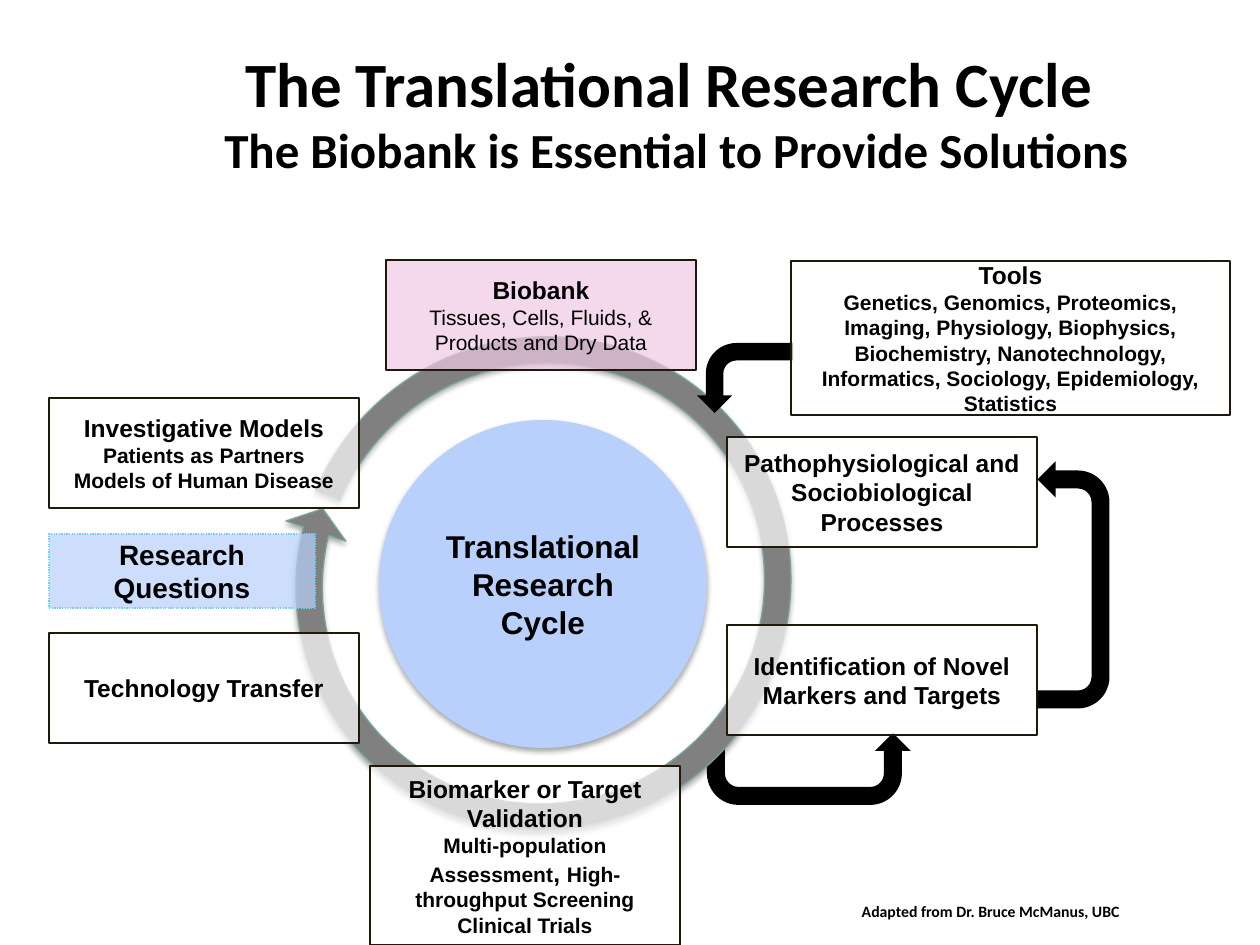
"""Build the translational research cycle slide."""
import pptx
import pptx.util
import pptx.dml.color
import pptx.enum.dml
import pptx.enum.shapes
import pptx.enum.text
from dataclasses import dataclass
from lxml import etree

PX = 914400 / 126
SHAPE = pptx.enum.shapes.MSO_SHAPE
ANCHOR = pptx.enum.text.MSO_ANCHOR


@dataclass(frozen=True)
class Theme:
    heading_font: str = "Calibri"
    label_font: str = "Arial"
    ink: str = "000000"
    paper: str = "FFFFFF"
    pink: str = "F0CAE5"
    blue: str = "B8D0FB"
    ring: str = "808080"
    ring_edge: str = "77A49A"
    box_edge: str = "20190B"
    question_edge: str = "6DCFF6"
    title: int = 36
    subtitle: int = 28
    hub: int = 18
    question: int = 16
    head: int = 14
    detail: int = 12
    credit: int = 9
    edge: float = 0.75
    box_alpha: int = 70


T = Theme()
STAGE_W, STAGE_H = 310, 110
LEFT_X, RIGHT_X = 49, 727

TITLE = [[("The Translational Research Cycle ", T.title, True)],
         [("The Biobank is Essential to Provide Solutions", T.subtitle, True)]]
CREDIT = [[("Adapted from Dr. Bruce McManus, UBC", T.credit, True)]]
HUB = [[("Translational Research Cycle", T.hub, True)]]
QUESTIONS = [[("Research Questions", T.question, True)]]

STAGES = [
    ((LEFT_X, 398, STAGE_W, STAGE_H), T.paper,
     [[("Investigative Models", T.head, True)],
      [("Patients as Partners", T.detail, True)],
      [("Models of Human Disease", T.detail, True)]]),
    ((386, 260, STAGE_W, STAGE_H), T.pink,
     [[("Biobank", T.head, True)],
      [("Tissues, Cells, Fluids, & Products and Dry Data", T.detail, False)]]),
    ((RIGHT_X, 437, STAGE_W, STAGE_H), T.paper,
     [[("Pathophysiological and Sociobiological Processes", T.head, True)]]),
    ((RIGHT_X, 625, STAGE_W, STAGE_H), T.paper,
     [[("Identification of Novel Markers and Targets", T.head, True)]]),
    ((370, 766, STAGE_W, 179), T.paper,
     [[("Biomarker or Target Validation", T.head, True)],
      [("Multi-population Assessment", T.detail, True), (", ", T.head, True),
       ("High-throughput Screening", T.detail, True)],
      [("Clinical Trials", T.detail, True)]]),
    ((LEFT_X, 633, STAGE_W, STAGE_H), T.paper,
     [[("Technology Transfer", T.head, True)]]),
]
TOOLS = ((791, 261, 439, 154), T.paper,
         [[("Tools", T.head, True)],
          [("Genetics, Genomics, Proteomics, Imaging, Physiology, Biophysics, "
            "Biochemistry, Nanotechnology, Informatics, Sociology, "
            "Epidemiology, Statistics", T.detail, True)]])

U_TURN = (0.25, 0.25, 0.25, 0.44, 1)
RING = (0.05, 3.44, 139.12, 144.59, 0.06)


def emu(frame):
    return [pptx.util.Emu(round(v * PX)) for v in frame]


def rgb(code):
    return pptx.dml.color.RGBColor.from_string(code)


def add_alpha(color, percent):
    etree.SubElement(color, pptx.oxml.ns.qn("a:alpha"), val=str(percent * 1000))


def write(frame, lines, font, anchor, margins=(13, 6)):
    frame.word_wrap = True
    frame.auto_size = pptx.enum.text.MSO_AUTO_SIZE.NONE
    frame.vertical_anchor = anchor
    side, edge = emu(margins)
    frame.margin_left = frame.margin_right = side
    frame.margin_top = frame.margin_bottom = edge
    paragraph = frame.paragraphs[0]
    paragraph.alignment = pptx.enum.text.PP_ALIGN.CENTER
    for index, line in enumerate(lines):
        if index:
            paragraph.add_line_break()
        for text, size, bold in line:
            run = paragraph.add_run()
            run.text = text
            run.font.name = font
            run.font.size = pptx.util.Pt(size)
            run.font.bold = bold
            run.font.color.rgb = rgb(T.ink)


def add_figure(slide, kind, frame, fill, edge=None, adjustments=(),
               rotation=0, flip=None):
    figure = slide.shapes.add_shape(kind, *emu(frame))
    figure.shadow.inherit = False
    figure.fill.solid()
    figure.fill.fore_color.rgb = rgb(fill)
    if edge:
        figure.line.color.rgb = rgb(edge)
        figure.line.width = pptx.util.Pt(T.edge)
    else:
        figure.line.fill.background()
    for index, value in enumerate(adjustments):
        figure.adjustments[index] = value
    figure.rotation = rotation
    if flip:
        figure.element.spPr.find(pptx.oxml.ns.qn("a:xfrm")).set(flip, "1")
    return figure


def add_box(slide, frame, fill, lines, edge=T.box_edge):
    box = add_figure(slide, SHAPE.RECTANGLE, frame, fill, edge)
    color = box.element.spPr.find(
        pptx.oxml.ns.qn("a:solidFill") + "/" + pptx.oxml.ns.qn("a:srgbClr"))
    add_alpha(color, T.box_alpha)
    write(box.text_frame, lines, T.label_font, ANCHOR.MIDDLE)
    return box


def cast_shadow(figure):
    qn = pptx.oxml.ns.qn
    effects = figure.element.spPr.find(qn("a:effectLst"))
    shadow = etree.SubElement(
        effects, qn("a:outerShdw"), blurRad=str(pptx.util.Pt(3.1)),
        dist=str(pptx.util.Pt(1.8)), dir="5400000", rotWithShape="0")
    add_alpha(etree.SubElement(shadow, qn("a:srgbClr"), val=T.ink), 35)


def main():
    deck = pptx.Presentation()
    deck.slide_width, deck.slide_height = emu((1260, 945))
    slide = deck.slides.add_slide(deck.slide_layouts[5])

    title = slide.shapes.title
    title.left, title.top, title.width, title.height = emu((135, 38, 1082, 126))
    write(title.text_frame, TITLE, T.heading_font, ANCHOR.TOP)
    credit = slide.shapes.add_textbox(*emu((724, 886, 533, 50)))
    write(credit.text_frame, CREDIT, T.heading_font, ANCHOR.MIDDLE, (0, 0))

    add_figure(slide, SHAPE.U_TURN_ARROW, (707, 733, 204, 72), T.ink,
               adjustments=U_TURN, flip="flipV")
    hub = add_figure(slide, SHAPE.OVAL, (379, 420, 328, 328), T.blue)
    write(hub.text_frame, HUB, T.label_font, ANCHOR.MIDDLE)
    ring = add_figure(slide, SHAPE.CIRCULAR_ARROW, (276, 320, 535, 527), T.ring,
                      T.ring_edge, RING, 321.1)
    for figure in (hub, ring):
        cast_shadow(figure)

    for stage in STAGES:
        add_box(slide, *stage)
    add_figure(slide, SHAPE.U_TURN_ARROW, (950, 549, 247, 72), T.ink,
               adjustments=U_TURN, rotation=270, flip="flipV")
    add_figure(slide, SHAPE.BENT_ARROW, (710, 330, 70, 96), T.ink,
               rotation=270, flip="flipH")
    add_box(slide, *TOOLS)
    questions = add_box(slide, (LEFT_X, 534, 266, 74), T.blue, QUESTIONS,
                        T.question_edge)
    questions.line.dash_style = pptx.enum.dml.MSO_LINE.ROUND_DOT

    deck.save("out.pptx")


if __name__ == "__main__":
    main()
